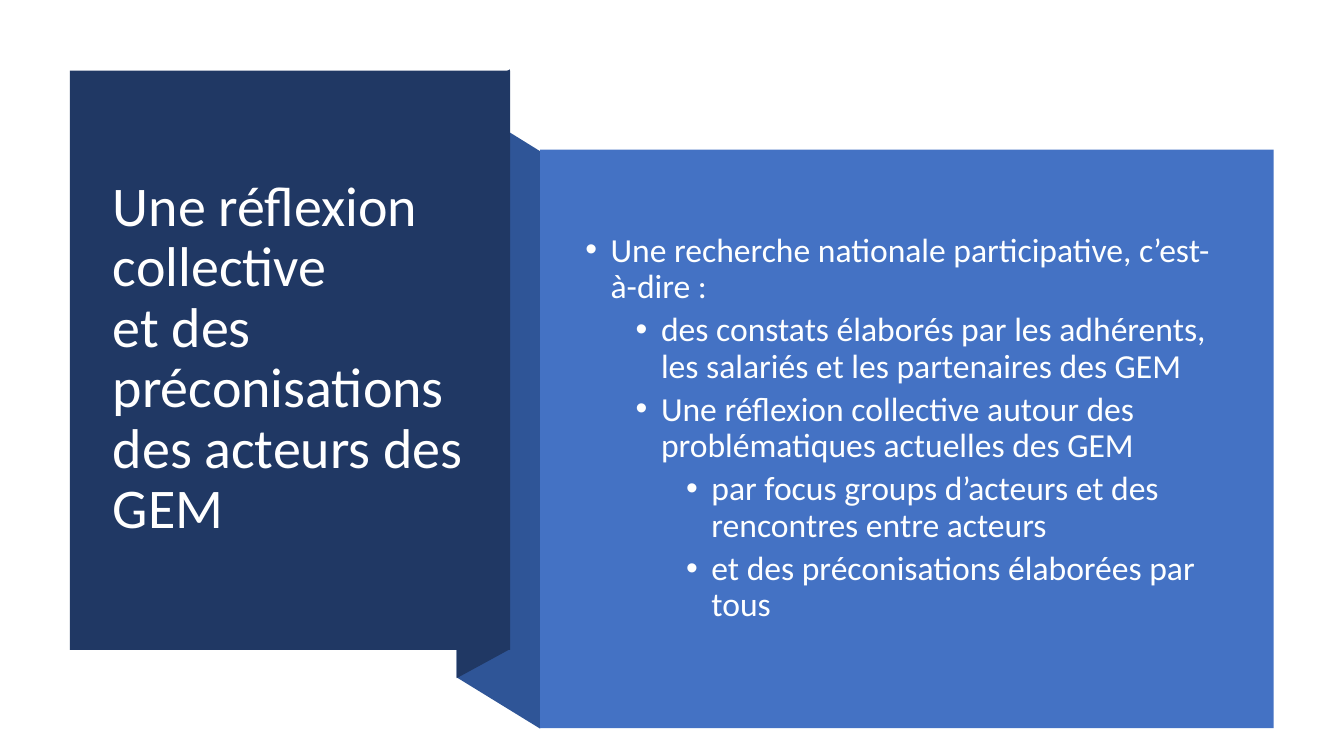
from pptx import Presentation
from pptx.dml.color import RGBColor
from pptx.enum.shapes import MSO_SHAPE as Kind
from pptx.enum.text import MSO_ANCHOR as Anchor, MSO_AUTO_SIZE as Fit, PP_ALIGN as Align
from pptx.oxml import parse_xml
from pptx.oxml.ns import nsdecls
from pptx.util import Cm, Pt

WHITE = RGBColor(0xFF, 0xFF, 0xFF)
SOFT = RGBColor(0xFE, 0xFF, 0xFF)
NAVY = RGBColor(0x20, 0x38, 0x64)
MID = RGBColor(0x2F, 0x55, 0x97)
BLUE = RGBColor(0x44, 0x72, 0xC4)

TITLE = "Une réflexion collective \vet des préconisations des acteurs des GEM"
POINTS = [
    (0, "Une recherche nationale participative, c’est-à-dire :"),
    (1, "des constats élaborés par les adhérents, les salariés et les partenaires des GEM"),
    (1, "Une réflexion collective autour des problématiques actuelles des GEM"),
    (2, "par focus groups d’acteurs et des rencontres entre acteurs"),
    (2, "et des préconisations élaborées par tous"),
]


def assign(item, values):
    for name, value in values.items():
        setattr(item, name, value)


class Page:
    face = "Calibri"
    frame = {"word_wrap": True, "auto_size": Fit.NONE, "vertical_anchor": Anchor.MIDDLE}
    para = {"alignment": Align.LEFT, "line_spacing": 0.9}

    def __init__(self, deck):
        self.slide = deck.slides.add_slide(deck.slide_layouts[5])
        self.shapes = self.slide.shapes

    def paint(self, shape, color):
        shape.shadow.inherit = False
        shape.fill.solid()
        shape.fill.fore_color.rgb = color
        shape.line.fill.background()

    def rect(self, box, color):
        self.paint(self.shapes.add_shape(Kind.RECTANGLE, *map(Cm, box)), color)

    def outline(self, points, color):
        first, *rest = [(Cm(x), Cm(y)) for x, y in points]
        pen = self.shapes.build_freeform(*first)
        pen.add_line_segments(rest)
        self.paint(pen.convert_to_shape(), color)

    def style(self, para, size, color):
        assign(para, self.para)
        assign(para.font, {"name": self.face, "size": Pt(size)})
        para.font.color.rgb = color

    def title(self, box, text):
        """Fill the title placeholder and bring it to the front."""
        head = self.shapes.title
        assign(head, dict(zip(("left", "top", "width", "height"), map(Cm, box))))
        head.element.getparent().append(head.element)
        assign(head.text_frame, self.frame)
        head.text_frame.text = text
        self.style(head.text_frame.paragraphs[0], 40, WHITE)

    def bullets(self, box, points):
        frame = self.shapes.add_textbox(*map(Cm, box)).text_frame
        assign(frame, self.frame)
        for i, (level, text) in enumerate(points):
            para = frame.add_paragraph() if i else frame.paragraphs[0]
            para.text = text
            para.level = level
            props = para._p.get_or_add_pPr()
            props.set("marL", str(Cm(0.64 + 1.27 * level)))
            props.set("indent", str(Cm(-0.64)))
            for mark in ('<a:buFont {} typeface="Arial"/>', '<a:buChar {} char="•"/>'):
                props.append(parse_xml(mark.format(nsdecls("a"))))
            self.style(para, 24, SOFT)
            if i:
                para.space_before = Pt(5)


def main():
    deck = Presentation()
    assign(deck, {"slide_width": Cm(33.87), "slide_height": Cm(19.05)})
    page = Page(deck)
    page.outline([(13.61, 18.36), (11.51, 17.07), (11.51, 2.51), (13.61, 3.81)], MID)
    page.outline([(12.85, 16.36), (11.51, 17.09), (11.51, 2.49), (12.85, 1.75)], NAVY)
    page.rect((1.76, 1.78, 11.1, 14.6), NAVY)
    page.title((2.59, 2.72, 9.42, 12.67), TITLE)
    page.rect((13.61, 3.77, 18.49, 14.58), BLUE)
    page.bullets((14.5, 4.78, 16.54, 12.04), POINTS)
    deck.save("out.pptx")


if __name__ == "__main__":
    main()
